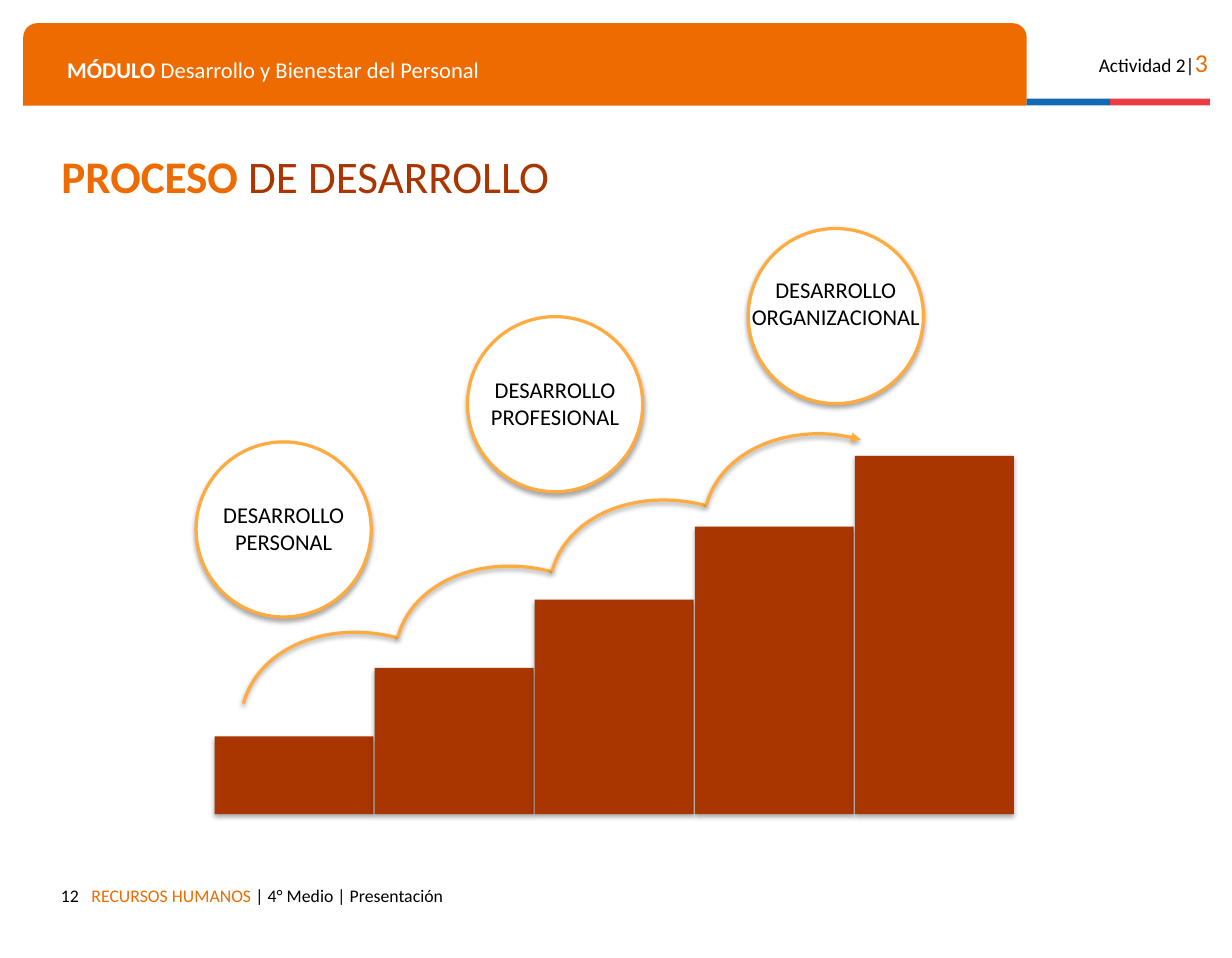
from dataclasses import dataclass

from lxml import etree
from pptx import Presentation
from pptx.dml.color import RGBColor
from pptx.enum.shapes import MSO_SHAPE as Shape
from pptx.enum.text import MSO_ANCHOR as Anchor, MSO_AUTO_SIZE as Fit, PP_ALIGN as Align
from pptx.oxml import parse_xml
from pptx.oxml.ns import nsdecls, qn
from pptx.util import Inches, Pt


@dataclass(frozen=True)
class Theme:
    font: str = "Calibri"
    orange: str = "ED6B00"
    rust: str = "A93501"
    amber: str = "FFAB40"
    blue: str = "0F69B4"
    red: str = "EB3C46"
    black: str = "000000"
    white: str = "FFFFFF"
    title: int = 28
    mark: int = 16
    label: int = 14
    small: int = 12
    foot: int = 11
    stroke: int = 2


class Deck:
    def __init__(self, theme):
        self.theme = theme
        self.prs = Presentation()
        self.prs.slide_width, self.prs.slide_height = Inches(10.62), Inches(8.26)
        self.slide = self.prs.slides.add_slide(self.prs.slide_layouts[5])

    def shape(self, kind, box, fill=None, line=None, shade=False):
        item = self.slide.shapes.add_shape(kind, *map(Inches, box))
        item.shadow.inherit = False
        if fill:
            item.fill.solid()
            item.fill.fore_color.rgb = RGBColor.from_string(fill)
        else:
            item.fill.background()
        if line:
            item.line.color.rgb = RGBColor.from_string(line)
            item.line.width = Pt(self.theme.stroke)
        else:
            item.line.fill.background()
        if shade:
            self.shade(item)
        return item

    def shade(self, item):
        """Add a soft shadow straight below the shape."""
        item._element.spPr.find(qn("a:effectLst")).append(parse_xml(
            f'<a:outerShdw {nsdecls("a")} blurRad="{Pt(3)}" dist="{Pt(1.8)}" '
            'dir="5400000" rotWithShape="0"><a:srgbClr val="000000">'
            '<a:alpha val="35000"/></a:srgbClr></a:outerShdw>'))

    def arc(self, box, head=False):
        item = self.shape(Shape.ARC, box, line=self.theme.amber, shade=True)
        item.rotation = 285
        if head:
            line = item.line._get_or_add_ln()
            etree.SubElement(line, qn("a:tailEnd"), type="triangle")

    def fill(self, frame, paras, align=Align.LEFT, inset=0.1):
        """Fill a frame; each paragraph is a list of (text, size, colour, bold)."""
        frame.word_wrap = True
        frame.auto_size = Fit.NONE
        frame.margin_left = frame.margin_right = Inches(inset)
        frame.margin_top = frame.margin_bottom = Inches(inset)
        for i, runs in enumerate(paras):
            para = frame.add_paragraph() if i else frame.paragraphs[0]
            para.alignment = align
            for text, size, color, bold in runs:
                run = para.add_run()
                run.text = text
                run.font.name = self.theme.font
                run.font.size = Pt(size)
                run.font.bold = bold
                run.font.color.rgb = RGBColor.from_string(color)

    def text(self, box, paras, align=Align.LEFT, inset=0.1):
        item = self.slide.shapes.add_textbox(*map(Inches, box))
        self.fill(item.text_frame, paras, align, inset)

    def title(self, box, runs):
        item = self.slide.shapes.title
        item.left, item.top, item.width, item.height = map(Inches, box)
        self.fill(item.text_frame, [runs])
        item.text_frame.vertical_anchor = Anchor.MIDDLE
        item.text_frame.paragraphs[0].line_spacing = 0.8

    def label(self, box, words):
        t = self.theme
        paras = [[(word, t.label, t.black, False)] for word in words]
        self.text(box, paras, Align.CENTER, 0.05)


def frame(deck):
    """Header band, activity mark, footer and page number."""
    t = deck.theme
    band = deck.shape(Shape.ROUND_2_SAME_RECTANGLE, (0.2, 0.2, 8.65, 0.71), t.orange)
    band.adjustments[0] = 0.17
    deck.shape(Shape.RECTANGLE, (8.85, 0.85, 0.72, 0.06), t.blue)
    deck.shape(Shape.RECTANGLE, (9.57, 0.85, 0.86, 0.06), t.red)
    deck.text((9.23, 0.3, 1.28, 0.43), [[
        ("Actividad 2|", t.small, t.black, False),
        ("3", t.mark, t.orange, False)]], Align.RIGHT)
    deck.text((0.48, 0.38, 8.14, 0.41), [[
        ("MÓDULO", t.label, t.white, True),
        (" Desarrollo y Bienestar del Personal", t.label, t.white, False)]])
    deck.text((0.69, 7.53, 7.14, 0.35), [[
        ("RECURSOS HUMANOS ", t.foot, t.orange, False),
        ("| 4° Medio | Presentación", t.foot, t.black, False)]])
    deck.text((0.41, 7.53, 0.37, 0.35), [[("12", t.foot, t.black, False)]], Align.RIGHT)


def stairs(deck):
    t = deck.theme
    base = 7.02
    tops = (6.35, 5.76, 5.17, 4.54, 3.93)
    for i, top in enumerate(tops):
        deck.shape(Shape.RECTANGLE, (1.85 + 1.38 * i, top, 1.37, base - top),
                   t.rust, shade=True)
    hops = len(tops) - 1
    for i in range(hops):
        deck.arc((2.31 + 1.33 * i, 5.22 - 0.57 * i, 1.78, 2.28), head=i == hops - 1)


def stages(deck):
    """Circles with the three kinds of growth; drop is label top below circle top."""
    t = deck.theme
    size, wide = 1.51, 1.58
    for x, y, drop, word in ((1.69, 3.81, 0.46, "PERSONAL"),
                             (4.03, 2.73, 0.46, "PROFESIONAL"),
                             (6.45, 1.97, 0.36, "ORGANIZACIONAL")):
        deck.shape(Shape.OVAL, (x, y, size, size), t.white, t.amber, shade=True)
        deck.label((x + (size - wide) / 2, y + drop, wide, 0.57), ("DESARROLLO", word))


def main():
    t = Theme()
    deck = Deck(t)
    frame(deck)
    deck.title((0.43, 1.26, 4.55, 0.59), [
        ("PROCESO ", t.title, t.orange, True),
        ("DE DESARROLLO", t.title, t.rust, False)])
    stairs(deck)
    stages(deck)
    deck.prs.save("out.pptx")


if __name__ == "__main__":
    main()
